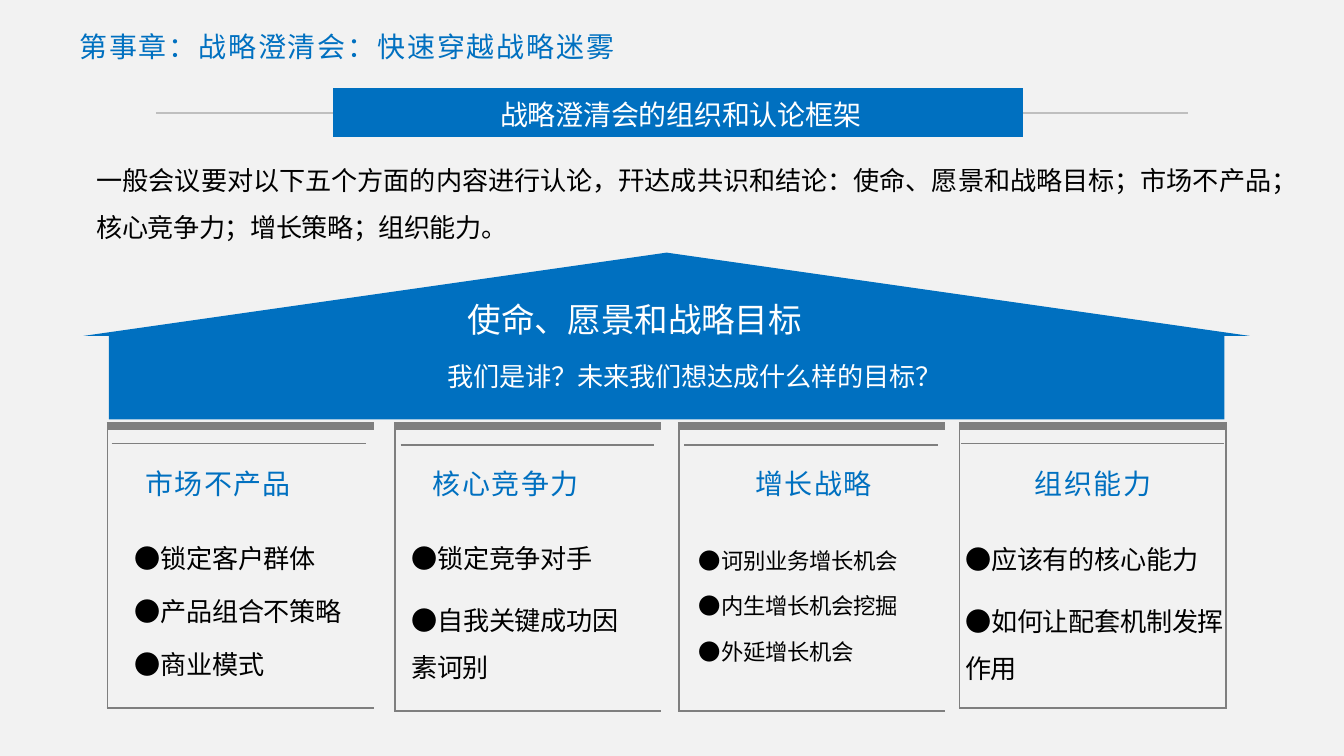
from lxml import etree
from pptx import Presentation
from pptx.dml.color import RGBColor
from pptx.enum.shapes import MSO_CONNECTOR, MSO_SHAPE
from pptx.enum.text import MSO_ANCHOR, PP_ALIGN
from pptx.oxml.ns import qn
from pptx.util import Inches, Pt

LEFT, MID = PP_ALIGN.LEFT, PP_ALIGN.CENTER
TOP, CENTER = MSO_ANCHOR.TOP, MSO_ANCHOR.MIDDLE
STRAIGHT, RECT = MSO_CONNECTOR.STRAIGHT, MSO_SHAPE.RECTANGLE

THEME = dict(
    font="Noto Sans CJK SC", dot="Arial",
    blue="0070C0", gray="7F7F7F", pale="BFBFBF", back="F2F2F2",
    white="FFFFFF", black="000000",
    head=15, roof=18, body=14,
)

TITLE = "第事章：战略澄清会：快速穿越战略迷雾"
BANNER = "战略澄清会的组织和认论框架"
INTRO = [
    ("一般会议要对以下五个方面的内容进行认论，幵达成共识和结论：使命、愿景和战略目标；市场不产品；", -0.05),
    ("核心竞争力；增长策略；组织能力。", -0.3),
]
GOAL = "使命、愿景和战略目标"
ASK = "我们是诽？未来我们想达成什么样的目标？"

# indents in inches; size, line, lead (before first item) and gap in points
CARDS = [
    dict(x=0.8, high=2.1, head="市场不产品", inset=0.28, dent=0.2,
         size=14, line=20, lead=19.7, gap=8.4, rule=(0.03, 1.92, 0.13), sides="LTB",
         items=["锁定客户群体", "产品组合不策略", "商业模式"]),
    dict(x=2.94, high=2.12, head="核心竞争力", inset=0.28, dent=0.12,
         size=14, line=25.2, lead=14.5, gap=8, rule=(0.04, 1.93, 0.14), sides="LTB",
         pad=0.2, items=["锁定竞争对手", "自我关键成功因素诃别"]),
    dict(x=5.05, high=2.12, head="增长战略", inset=0.57, dent=0.15,
         size=12, line=24.4, lead=15, gap=0, rule=(0.04, 1.93, 0.14), sides="LTB",
         items=["诃别业务增长机会", "内生增长机会挖掘", "外延增长机会"]),
    dict(x=7.14, high=2.1, head="组织能力", inset=0.56, dent=0.04,
         size=14, line=25.2, lead=14.9, gap=8, rule=(0.01, 1.97, 0.13), sides="LTRB",
         items=["应该有的核心能力", "如何让配套机制发挥作用"]),
]
CARD_TOP, CARD_WIDE = 3.17, 1.98
# hundredths of an inch
ROOF = [(62, 250), (496, 188), (930, 250), (911, 250),
        (911, 312), (81, 312), (81, 250)]


def rgb(name):
    return RGBColor.from_string(THEME[name])


def write(frame, text, size=THEME["body"], color="black", line=None, before=0,
          dent=0, space=0, align=LEFT, dot=False):
    """Add a paragraph, using the empty first one if it is still free."""
    para = frame.paragraphs[0]
    if para.runs:
        para = frame.add_paragraph()
    para.alignment = align
    para.space_before = Pt(before)
    if line:
        para.line_spacing = Pt(line)
    props = para._p.get_or_add_pPr()
    props.set("marL", str(Inches(dent)))
    props.set("indent", "0")
    parts = [("●", "dot")] if dot else []
    for part, face in parts + [(text, "font")]:
        run = para.add_run()
        run.text = part
        run.font.size = Pt(size)
        run.font.name = THEME[face]
        run.font.color.rgb = rgb(color)
        rpr = run._r.get_or_add_rPr()
        rpr.set("spc", str(round(space * 100)))
        etree.SubElement(rpr, qn("a:ea"), typeface=THEME["font"])


def box(slide, x, y, wide, high):
    frame = slide.shapes.add_textbox(*map(Inches, (x, y, wide, high))).text_frame
    frame.word_wrap = True
    frame.margin_left = frame.margin_right = 0
    frame.margin_top = frame.margin_bottom = 0
    return frame


def paint(shape, color):
    shape.shadow.inherit = False
    shape.fill.solid()
    shape.fill.fore_color.rgb = rgb(color)
    shape.line.fill.background()


def rule(slide, x, y, end, color):
    line = slide.shapes.add_connector(STRAIGHT, *map(Inches, (x, y, end, y)))
    line.line.color.rgb = rgb(color)
    line.line.width = Pt(1)
    etree.SubElement(line._element.spPr, qn("a:effectLst"))


def edge(cell, widths, color):
    """Draw the sides named in widths (points) and clear the others."""
    props = cell._tc.get_or_add_tcPr()
    for spot, side in enumerate("LRTB"):
        line = etree.Element(qn("a:ln" + side))
        if side in widths:
            line.set("w", str(Pt(widths[side])))
            fill = etree.SubElement(line, qn("a:solidFill"))
            etree.SubElement(fill, qn("a:srgbClr"), val=THEME[color])
        else:
            etree.SubElement(line, qn("a:noFill"))
        props.insert(spot, line)


def panel(slide, x, y, wide, high, widths, color, fill=None):
    """Add a one-cell table and return its cell."""
    table = slide.shapes.add_table(1, 1, *map(Inches, (x, y, wide, high))).table
    table.first_row = table.horz_banding = False
    cell = table.cell(0, 0)
    cell.margin_left = cell.margin_right = 0
    cell.margin_top = cell.margin_bottom = 0
    if fill:
        cell.fill.solid()
        cell.fill.fore_color.rgb = rgb(fill)
    else:
        cell.fill.background()
    edge(cell, widths, color)
    return cell


def roof(slide):
    pen = slide.shapes.build_freeform(*ROOF[0], scale=Inches(0.01))
    pen.add_line_segments(ROOF[1:], close=True)
    paint(pen.convert_to_shape(), "blue")
    frame = box(slide, 0.61, 2.16, 8.7, 0.8)
    write(frame, GOAL, THEME["roof"], "white", line=26, dent=2.87, space=-0.1)
    write(frame, ASK, color="white", line=20, before=8.4, dent=2.72, space=-0.1)


def card(slide, data):
    x = data["x"]
    widths = {side: 4.5 if side == "T" else 1 for side in data["sides"]}
    cell = panel(slide, x, CARD_TOP, CARD_WIDE, data["high"], widths, "gray")
    cell.vertical_anchor = TOP
    cell.margin_top = Inches(0.31)
    cell.margin_right = Inches(data.get("pad", 0))
    frame = cell.text_frame
    write(frame, data["head"], THEME["head"], "blue", line=18.6,
          dent=data["inset"], space=0.8)
    for spot, item in enumerate(data["items"]):
        write(frame, item, data["size"], line=data["line"], dent=data["dent"],
              before=data["gap"] if spot else data["lead"], space=-0.2, dot=True)
    start, end, drop = data["rule"]
    rule(slide, x + start, CARD_TOP + drop, x + end, "gray")


def main():
    deck = Presentation()
    deck.slide_width = Inches(10)
    deck.slide_height = deck.slide_width * 9 // 16
    slide = deck.slides.add_slide(deck.slide_layouts[6])
    paint(slide.shapes.add_shape(RECT, 0, 0, deck.slide_width, deck.slide_height),
          "back")

    write(box(slide, 0.59, 0.22, 4.4, 0.28), TITLE, THEME["head"], "blue",
          line=18, space=1)
    rule(slide, 1.16, 0.84, 8.84, "pale")
    bar = panel(slide, 2.49, 0.67, 5.11, 0.34, dict.fromkeys("LRTB", 2), "blue", "blue")
    bar.vertical_anchor = CENTER
    bar.margin_left = Inches(0.04)
    write(bar.text_frame, BANNER, THEME["head"], "white", align=MID, space=-0.1)
    intro = box(slide, 0.72, 1.11, 8.97, 0.7)
    for text, space in INTRO:
        write(intro, text, line=25.2, space=space)
    roof(slide)
    for data in CARDS:
        card(slide, data)
    deck.save("out.pptx")


if __name__ == "__main__":
    main()
